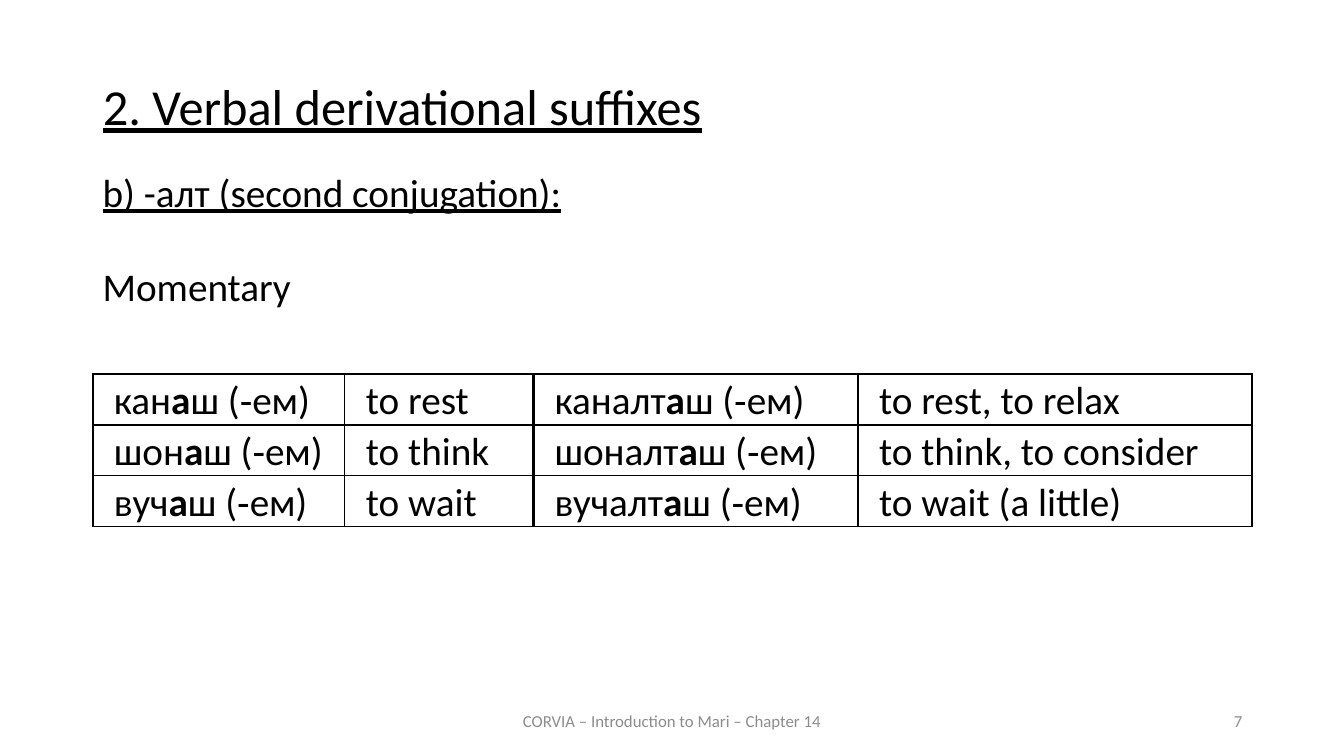
import pptx
import pptx.util
import pptx.dml.color
import pptx.enum.text
import lxml.etree

Inches = pptx.util.Inches
Pt = pptx.util.Pt
ALIGN = pptx.enum.text.PP_ALIGN
ANCHOR = pptx.enum.text.MSO_ANCHOR

TITLE = "2. Verbal derivational suffixes"
SUFFIX = "b) -алт (second conjugation):"
MEANING = "Momentary"
FOOTER = "CORVIA – Introduction to Mari – Chapter 14"
PAGE_NUMBER = "7"

# Verbs are (stem, stressed vowel, ending); glosses are plain strings.
VERBS = [
    (("кан", "а", "ш (‑ем)"), "to rest", ("каналт", "а", "ш (‑ем)"), "to rest, to relax"),
    (("шон", "а", "ш (‑ем)"), "to think", ("шоналт", "а", "ш (‑ем)"), "to think, to consider"),
    (("вуч", "а", "ш (‑ем)"), "to wait", ("вучалт", "а", "ш (‑ем)"), "to wait (a little)"),
]

COLOURS = {"ink": "000000", "muted": "8C8C8C"}
FONT = "Calibri"
WIDTH, HEIGHT = 13.33, 7.5
LEFT, CONTENT_WIDTH = 0.92, 11.5
FOOTER_TOP, FOOTER_HEIGHT = 6.95, 0.4
NUMBER_WIDTH, FOOTER_WIDTH = 3, 4.5

TABLE_TOP, ROW_HEIGHT = 3.71, 0.5
COLUMN_WIDTHS = [2.5, 1.87, 3.22, 3.91]
COLUMN_EDGES = [1.5, 1, 2.25, 1, 1.5]
ROW_EDGES = [1.5, 1, 1, 1]
CELL_FORMAT = {
    "margin_left": Inches(0.21), "margin_right": Inches(0.21),
    "margin_top": Inches(0.03), "margin_bottom": 0,
    "vertical_anchor": ANCHOR.MIDDLE,
}
BODY = {"line_spacing": 0.9, "space_before": Pt(10)}


def apply(target, values):
    for name, value in values.items():
        setattr(target, name, value)


def add_span(para, text, size, colour="ink", **font_format):
    span = para.add_run()
    span.text = text
    apply(span.font, {"name": FONT, "size": Pt(size), **font_format})
    span.font.color.rgb = pptx.dml.color.RGBColor.from_string(COLOURS[colour])


def fill_box(box, place, text, size, para_format, anchor=ANCHOR.TOP, **span_format):
    apply(box, dict(zip(("left", "top", "width", "height"), map(Inches, place))))
    apply(box.text_frame, {"word_wrap": True, "vertical_anchor": anchor,
                           "auto_size": pptx.enum.text.MSO_AUTO_SIZE.NONE})
    para = box.text_frame.paragraphs[0]
    apply(para, para_format)
    add_span(para, text, size, **span_format)


def add_border(cell, side, points):
    properties = cell._tc.get_or_add_tcPr()
    namespace = "{" + properties.nsmap["a"] + "}"
    line = lxml.etree.SubElement(properties, namespace + "ln" + side, w=str(Pt(points)))
    fill = lxml.etree.SubElement(line, namespace + "solidFill")
    lxml.etree.SubElement(fill, namespace + "srgbClr", val=COLOURS["ink"])


def add_verb_table(page):
    frame = page.shapes.add_table(
        len(VERBS), len(COLUMN_WIDTHS), Inches(LEFT), Inches(TABLE_TOP),
        Inches(CONTENT_WIDTH), Inches(ROW_HEIGHT * len(VERBS)))
    table = frame.table
    apply(table, {"first_row": False, "horz_banding": False})
    for column, width in zip(table.columns, COLUMN_WIDTHS):
        column.width = Inches(width)
    for r, verb_row in enumerate(VERBS):
        table.rows[r].height = Inches(ROW_HEIGHT)
        for c, entry in enumerate(verb_row):
            cell = table.cell(r, c)
            apply(cell, CELL_FORMAT)
            edges = {"L": COLUMN_EDGES[c], "R": COLUMN_EDGES[c + 1],
                     "T": ROW_EDGES[r], "B": ROW_EDGES[r + 1]}
            for side, points in edges.items():
                add_border(cell, side, points)
            cell.fill.background()
            parts = (entry,) if isinstance(entry, str) else entry
            for i, part in enumerate(parts):
                add_span(cell.text_frame.paragraphs[0], part, 28, bold=i == 1)


def main():
    deck = pptx.Presentation()
    apply(deck, {"slide_width": Inches(WIDTH), "slide_height": Inches(HEIGHT)})
    page = deck.slides.add_slide(deck.slide_layouts[5])

    fill_box(page.shapes.title, (LEFT, 0.76, CONTENT_WIDTH, 0.83), TITLE, 36,
             {"alignment": ALIGN.JUSTIFY, "line_spacing": 0.9, "space_before": Pt(12)},
             underline=True)

    footer_left = (WIDTH - FOOTER_WIDTH) / 2
    number_left = LEFT + CONTENT_WIDTH - NUMBER_WIDTH
    muted = {"anchor": ANCHOR.MIDDLE, "colour": "muted"}
    texts = [
        ((LEFT, 1.67, CONTENT_WIDTH, 0.58), SUFFIX, 28, BODY, {"underline": True}),
        ((LEFT, 2.61, CONTENT_WIDTH, 0.67), MEANING, 28, BODY, {}),
        ((footer_left, FOOTER_TOP, FOOTER_WIDTH, FOOTER_HEIGHT), FOOTER, 12,
         {"alignment": ALIGN.CENTER}, muted),
        ((number_left, FOOTER_TOP, NUMBER_WIDTH, FOOTER_HEIGHT), PAGE_NUMBER, 12,
         {"alignment": ALIGN.RIGHT}, muted),
    ]
    for place, text, size, para_format, extra in texts:
        box = page.shapes.add_textbox(0, 0, 0, 0)
        fill_box(box, place, text, size, para_format, **extra)

    add_verb_table(page)
    deck.save("out.pptx")


if __name__ == "__main__":
    main()
